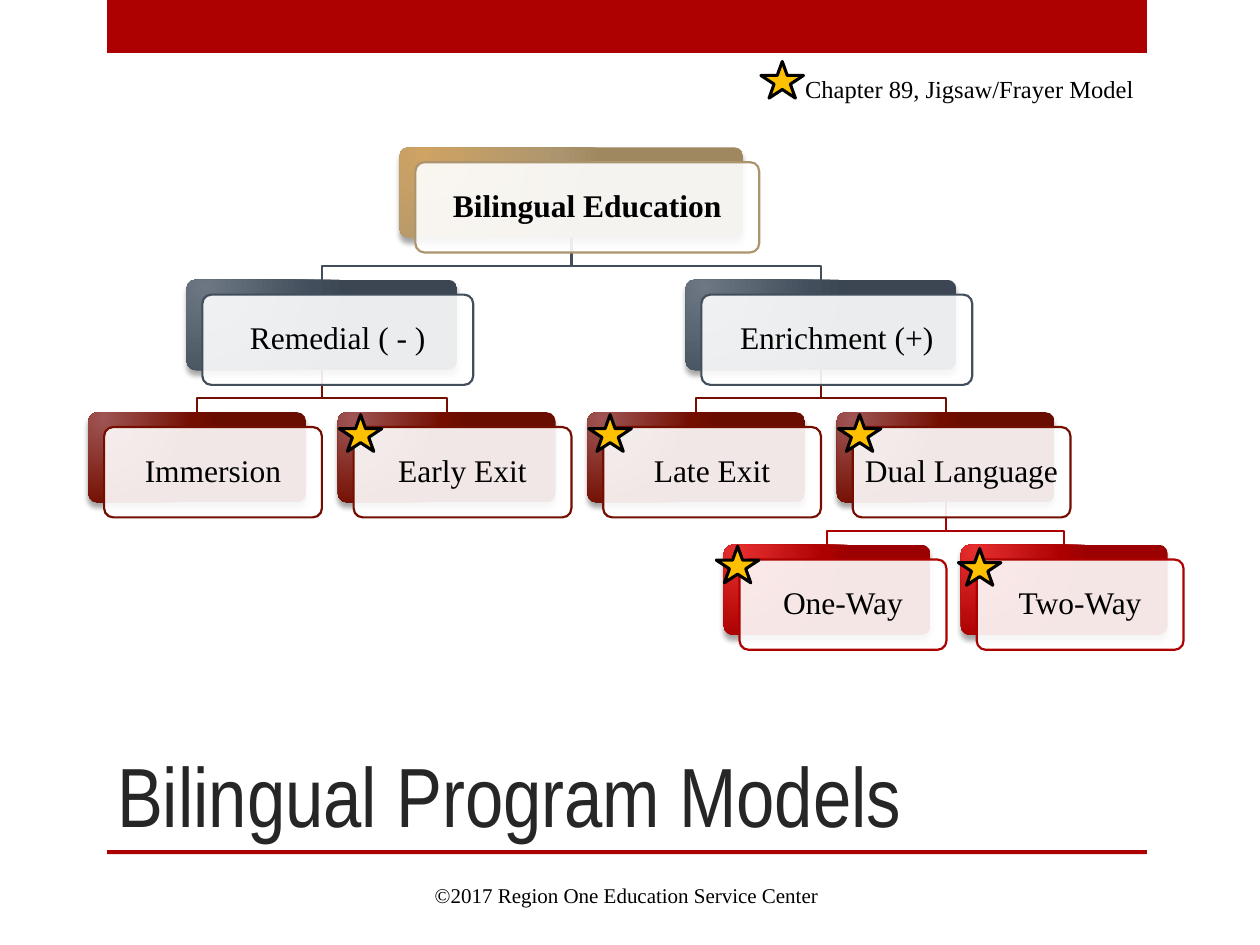
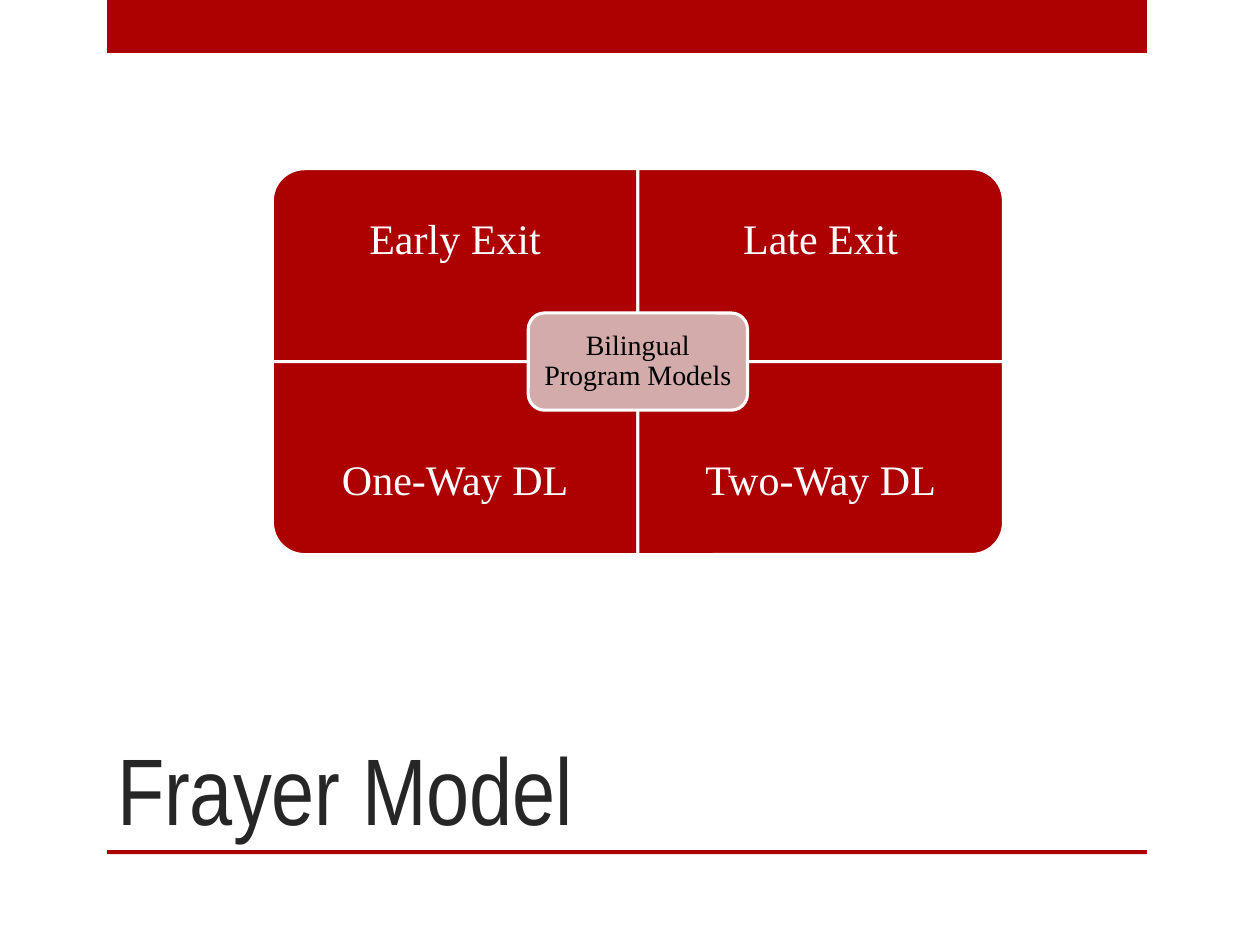
import pptx
import pptx.util
import pptx.dml.color
import pptx.enum.shapes
import pptx.enum.text
import pptx.oxml
from pptx.oxml.ns import nsdecls, qn

Cm, Pt = pptx.util.Cm, pptx.util.Pt
SHAPE = pptx.enum.shapes.MSO_SHAPE
ALIGN = pptx.enum.text.PP_ALIGN
ANCHOR = pptx.enum.text.MSO_ANCHOR

# Content: node = (label, star offset from the node's corner or None, children)
PROGRAMS = ("Bilingual Education", None, [
    ("Remedial ( - )", None, [
        ("Immersion", None, []),
        ("Early Exit", (0.03, 0.05), []),
    ]),
    ("Enrichment (+)", None, [
        ("Late Exit", (0.03, 0.05), []),
        ("Dual Language", (0.03, 0.05), [
            ("One-Way", (-0.15, 0.03), []),
            ("Two-Way", (-0.05, 0.08), []),
        ]),
    ]),
])
TREE_TITLE = "Bilingual Program Models"
ACTIVITY = "Chapter 89, Jigsaw/Frayer Model"
COPYRIGHT = "©2017 Region One Education Service Center"
FRAYER_TITLE = "Frayer Model"
FRAYER_CENTRE = "Bilingual Program Models"
# (label, column, row, rotation that turns the round corner outwards)
QUADRANTS = [
    ("Early Exit", 0, 0, 270),
    ("Late Exit", 1, 0, 0),
    ("One-Way DL", 0, 1, 180),
    ("Two-Way DL", 1, 1, 90),
]

# Shared look
COLORS = {"red": "AD0101", "title": "262626", "black": "000000",
          "white": "FFFFFF", "star": "FFC000", "centre": "D3ABAB"}
TITLE_FONT, BODY_FONT = "Arial Narrow", "Times New Roman"

# Tree levels: node width, distance between siblings, gradient colours
LEVELS = [
    {"width": 6.93, "spread": 0, "shades": ("CEA363", "AC956E", "9F875F")},
    {"width": 5.46, "spread": 10.06, "shades": ("6D7784", "424E5B", "3B4652")},
    {"width": 4.39, "spread": 5.03, "shades": ("9F5554", "730E00", "680D00")},
    {"width": 4.17, "spread": 4.78, "shades": ("E62F2F", "AD0101", "9C0101")},
]
ROOT_CENTRE, ROOT_TOP, LEVEL_STEP = 11.52, 2.97, 2.67
NODE_HEIGHT, CARD_DX, CARD_DY = 1.82, 0.32, 0.3
STAR_WIDTH, STAR_HEIGHT = 0.86, 0.74


def rgb(value):
    return pptx.dml.color.RGBColor.from_string(value)


def add_block(slide, kind, left, top, width, height, fill, line=None, weight=1.75):
    block = slide.shapes.add_shape(kind, Cm(left), Cm(top), Cm(width), Cm(height))
    block.shadow.inherit = False
    block.fill.solid()
    block.fill.fore_color.rgb = rgb(fill)
    if line:
        block.line.color.rgb = rgb(line)
        block.line.width = Pt(weight)
    else:
        block.line.fill.background()
    return block


def add_box(slide, left, top, width, height):
    return slide.shapes.add_textbox(Cm(left), Cm(top), Cm(width), Cm(height))


def write(holder, text, size=18, color="black", font=BODY_FONT, bold=False,
          align=ALIGN.CENTER, anchor=ANCHOR.MIDDLE, spacing=None, inset=None):
    frame = holder.text_frame
    frame.word_wrap = True
    frame.vertical_anchor = anchor
    if inset is not None:
        frame.margin_left = frame.margin_right = Cm(inset)
        frame.margin_top = frame.margin_bottom = Cm(inset)
    paragraph = frame.paragraphs[0]
    paragraph.alignment = align
    if spacing:
        paragraph.line_spacing = spacing
    run = paragraph.add_run()
    run.text = text
    run.font.name, run.font.size, run.font.bold = font, Pt(size), bold
    run.font.color.rgb = rgb(COLORS[color])


def start_slide(deck, title, title_size):
    """Add a slide with the top band, the title and the rule below it."""
    slide = deck.slides.add_slide(deck.slide_layouts[6])
    for top, height in ((0, 1.07), (17.14, 0.08)):
        add_block(slide, SHAPE.RECTANGLE, 2.16, top, 20.96, height, COLORS["red"])
    write(add_box(slide, 2.11, 12.7, 18.85, 4.45), title, size=title_size,
          color="title", font=TITLE_FONT, align=ALIGN.LEFT, anchor=ANCHOR.BOTTOM)
    return slide


# Tree parts
def shade(block, shades):
    """Give a block a circular gradient and a soft shadow."""
    stops = "".join(
        f'<a:gs pos="{pos}"><a:srgbClr val="{color}"/></a:gs>'
        for pos, color in zip((0, 76000, 100000), shades))
    gradient = pptx.oxml.parse_xml(
        f'<a:gradFill {nsdecls("a")} rotWithShape="1"><a:gsLst>{stops}</a:gsLst>'
        '<a:path path="circle"><a:fillToRect l="15000" t="15000" r="100000" '
        'b="100000"/></a:path></a:gradFill>')
    properties = block._element.spPr
    properties.replace(properties.find(qn("a:solidFill")), gradient)
    properties.find(qn("a:effectLst")).append(pptx.oxml.parse_xml(
        f'<a:outerShdw {nsdecls("a")} blurRad="38100" dist="38100" dir="5400000" '
        'rotWithShape="0"><a:srgbClr val="000000"><a:alpha val="35000"/>'
        '</a:srgbClr></a:outerShdw>'))


def add_star(slide, left, top):
    add_block(slide, SHAPE.STAR_5_POINT, left, top, STAR_WIDTH, STAR_HEIGHT,
              COLORS["star"], COLORS["black"])


def add_link(slide, parent_centre, child_centre, child_top, color):
    start, bend = child_top - LEVEL_STEP + NODE_HEIGHT, child_top - 0.28
    builder = slide.shapes.build_freeform(Cm(parent_centre), Cm(start))
    builder.add_line_segments(
        [(Cm(parent_centre), Cm(bend)), (Cm(child_centre), Cm(bend)),
         (Cm(child_centre), Cm(child_top))], close=False)
    link = builder.convert_to_shape()
    link.shadow.inherit = False
    link.fill.background()
    link.line.color.rgb = rgb(color)
    link.line.width = Pt(1.25)


def add_node(slide, node, centre, depth=0):
    label, star, children = node
    level = LEVELS[depth]
    width, shades = level["width"], level["shades"]
    left, top = centre - width / 2, ROOT_TOP + depth * LEVEL_STEP

    # Links lie behind the node they start from
    child_centres = []
    for index in range(len(children)):
        below = LEVELS[depth + 1]
        child_centre = centre + (index - (len(children) - 1) / 2) * below["spread"]
        add_link(slide, centre, child_centre, top + LEVEL_STEP, below["shades"][1])
        child_centres.append(child_centre)

    back = add_block(slide, SHAPE.ROUNDED_RECTANGLE, left, top, width, NODE_HEIGHT,
                     shades[1])
    shade(back, shades)
    card = add_block(slide, SHAPE.ROUNDED_RECTANGLE, left + CARD_DX, top + CARD_DY,
                     width, NODE_HEIGHT, COLORS["white"], shades[1], 1.25)
    white = card._element.spPr.find(qn("a:solidFill"))[0]
    white.append(pptx.oxml.parse_xml(f'<a:alpha {nsdecls("a")} val="90000"/>'))
    back.adjustments[0] = card.adjustments[0] = 0.1
    write(card, label, bold=depth == 0, spacing=0.9, inset=0.15)
    if star:
        add_star(slide, left + star[0], top + star[1])

    for child, child_centre in zip(children, child_centres):
        add_node(slide, child, child_centre, depth + 1)


def build_tree_slide(deck):
    slide = start_slide(deck, TREE_TITLE, 48)
    add_node(slide, PROGRAMS, ROOT_CENTRE)
    write(add_box(slide, 2.21, 17.53, 20.85, 1.02), COPYRIGHT, size=12)
    write(add_box(slide, 15.7, 1.37, 7.41, 0.86), ACTIVITY, size=14,
          align=ALIGN.RIGHT, anchor=ANCHOR.TOP)
    add_star(slide, 15.34, 1.24)


def build_frayer_slide(deck):
    slide = start_slide(deck, FRAYER_TITLE, 54)
    left, top, width, height = 5.49, 3.4, 7.37, 3.89
    label_height = height * 0.75

    # Quadrants: a quarter turn swaps the sides around the same centre
    for label, column, row, rotation in QUADRANTS:
        x, y = left + column * width, top + row * height
        w, h = (height, width) if rotation % 180 else (width, height)
        quadrant = add_block(slide, SHAPE.ROUND_1_RECTANGLE, x + (width - w) / 2,
                             y + (height - h) / 2, w, h, COLORS["red"], COLORS["white"])
        quadrant.rotation = rotation
        label_box = add_box(slide, x, y + row * (height - label_height),
                            width, label_height)
        write(label_box, label, size=24, color="white", spacing=0.9, inset=0.48)

    # Centre label
    centre_width, centre_height = 4.42, 1.96
    centre = add_block(slide, SHAPE.ROUNDED_RECTANGLE, left + width - centre_width / 2,
                       top + height - centre_height / 2, centre_width, centre_height,
                       COLORS["centre"], COLORS["white"])
    write(centre, FRAYER_CENTRE, size=16, spacing=0.9, inset=0.15)


def main():
    deck = pptx.Presentation()
    deck.slide_width, deck.slide_height = Cm(25.4), Cm(19.05)
    build_tree_slide(deck)
    build_frayer_slide(deck)
    deck.save("out.pptx")


if __name__ == "__main__":
    main()
